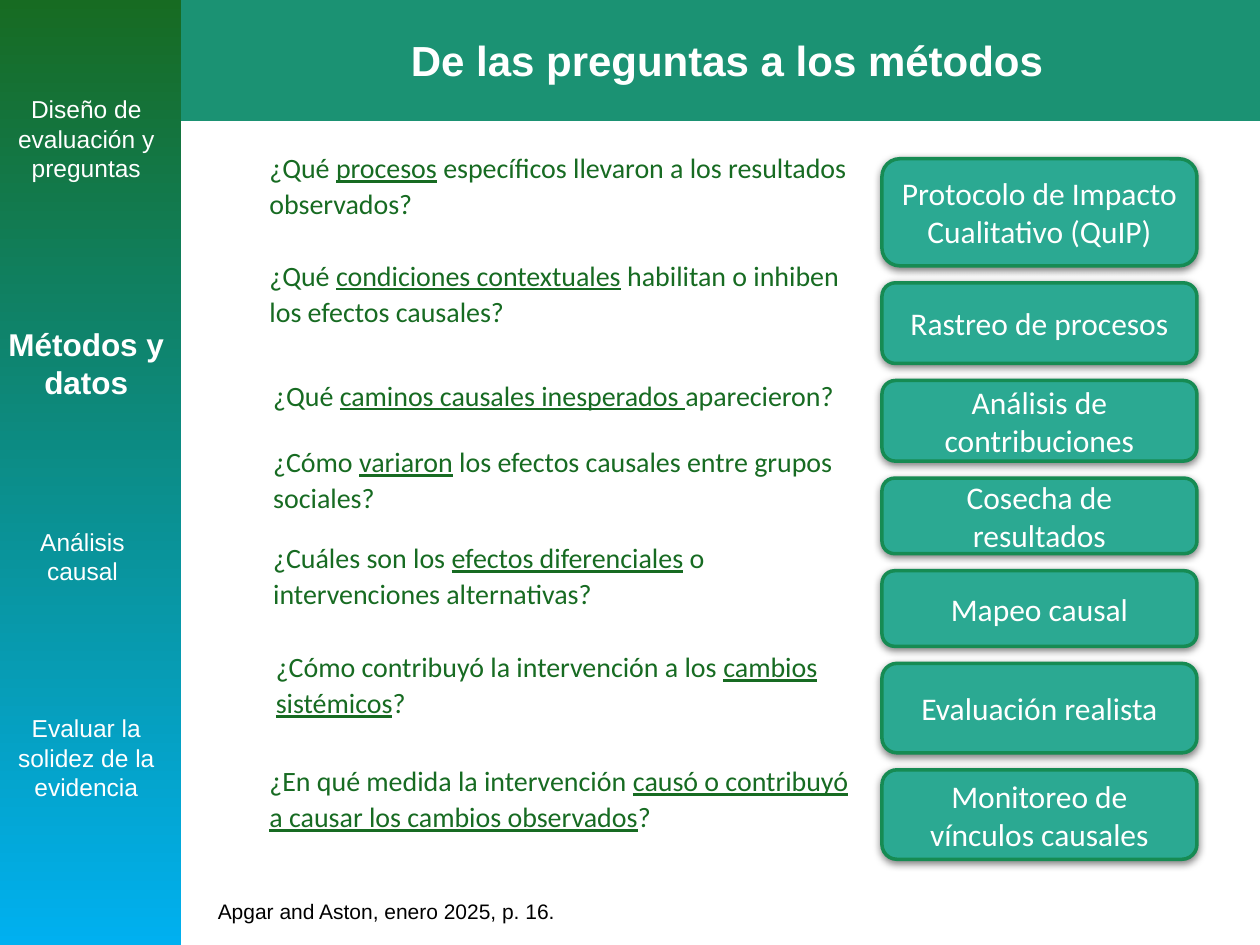
from dataclasses import dataclass

from lxml import etree
from pptx import Presentation
from pptx.dml.color import RGBColor
from pptx.enum.shapes import MSO_SHAPE
from pptx.enum.text import MSO_ANCHOR, MSO_AUTO_SIZE, PP_ALIGN
from pptx.oxml.ns import qn
from pptx.util import Inches, Pt

RECTANGLE = MSO_SHAPE.RECTANGLE
PROCESS = MSO_SHAPE.FLOWCHART_PROCESS
ROUNDED = MSO_SHAPE.ROUNDED_RECTANGLE
TOP, MIDDLE = MSO_ANCHOR.TOP, MSO_ANCHOR.MIDDLE
LEFT, CENTER = PP_ALIGN.LEFT, PP_ALIGN.CENTER

# The slide is a grid of square cells
WIDTH, HEIGHT = Inches(10), Inches(7.5)
COLUMNS, ROWS = 100, 75
TITLE_ONLY = 5


@dataclass(frozen=True)
class Theme:
    header: str = "1B9273"
    button: str = "2BA992"
    outline: str = "168B53"
    green: str = "176B22"
    blue: str = "00B0F0"
    white: str = "FFFFFF"
    black: str = "000000"
    heading_font: str = "Arial"
    body_font: str = "Calibri"
    title_size: int = 24
    large_size: int = 18
    question_size: int = 16
    step_size: int = 14
    source_size: int = 12


THEME = Theme()


@dataclass(frozen=True)
class Box:
    """Place and size in grid columns and rows."""
    left: float
    top: float
    width: float
    height: float

    def lengths(self) -> tuple[int, int, int, int]:
        return (round(WIDTH * self.left / COLUMNS), round(HEIGHT * self.top / ROWS),
                round(WIDTH * self.width / COLUMNS), round(HEIGHT * self.height / ROWS))


@dataclass(frozen=True)
class Step:
    text: str
    left: float
    top: float
    current: bool = False


@dataclass(frozen=True)
class Question:
    text: str  # underscores enclose the underlined words
    box: Box


@dataclass(frozen=True)
class Method:
    text: str
    height: float


HEADER = Box(0, -0.1, 100, 9.7)
TITLE = Box(17.2, 2.2, 81, 5)
SIDEBAR = Box(-0.7, 0, 15.1, 75)
SOURCE = Box(16.3, 70.8, 30.8, 3)
STEP_HEIGHT = 9.3
METHOD_LEFT, METHOD_TOP, METHOD_WIDTH, METHOD_GAP = 70, 12.6, 25, 1.35

STEPS = [
    Step("Diseño de evaluación y preguntas", -0.7, 6.5),
    Step("Métodos y datos", -0.7, 24.8, current=True),
    Step("Análisis\ncausal", -1, 40.8),
    Step("Evaluar la solidez de la evidencia", -0.7, 55.6),
]
QUESTIONS = [
    Question("¿Qué _procesos_ específicos llevaron a los resultados observados?",
             Box(15.4, 11.6, 54.6, 6)),
    Question("¿Qué _condiciones contextuales_ habilitan o inhiben los efectos causales?",
             Box(15.4, 18.9, 54.6, 8.5)),
    Question("¿Qué _caminos causales inesperados _aparecieron?",
             Box(15.7, 28.6, 54.6, 5.3)),
    Question("¿Cómo _variaron_ los efectos causales entre grupos sociales?",
             Box(15.7, 35.3, 54.3, 5.3)),
    Question("¿Cuáles son los _efectos diferenciales_ o intervenciones alternativas?",
             Box(15.7, 41.9, 54, 7.3)),
    Question("¿Cómo contribuyó la intervención a los _cambios sistémicos_?",
             Box(15.9, 50.6, 53.8, 7.3)),
    Question("¿En qué medida la intervención _causó o contribuyó a causar los cambios observados_?",
             Box(15.4, 59.6, 53.8, 7.3)),
]
METHODS = [
    Method("Protocolo de Impacto Cualitativo (QuIP)", 8.5),
    Method("Rastreo de procesos", 6.4),
    Method("Análisis de contribuciones", 6.4),
    Method("Cosecha de resultados", 6),
    Method("Mapeo causal", 6),
    Method("Evaluación realista", 7.1),
    Method("Monitoreo de vínculos causales", 7.1),
]


def color(value: str) -> RGBColor:
    return RGBColor.from_string(value)


def write(shape, text: str, font: str, size: int, ink: str, align=CENTER,
          anchor=TOP, bold: bool = False, margin: float = 0.05):
    """Write one paragraph, underlining what underscores enclose."""
    frame = shape.text_frame
    frame.word_wrap = True
    frame.auto_size = MSO_AUTO_SIZE.NONE
    frame.vertical_anchor = anchor
    frame.margin_left = frame.margin_right = Inches(0.1)
    frame.margin_top = frame.margin_bottom = Inches(margin)
    paragraph = frame.paragraphs[0]
    paragraph.alignment = align
    parts = text.split("_")
    paragraph.text = parts[0]
    for part in parts[1:]:
        paragraph.add_run().text = part
    for index, run in enumerate(paragraph.runs):
        run.font.name = font
        run.font.size = Pt(size)
        run.font.color.rgb = color(ink)
        run.font.bold = bold
        if len(parts) > 1:
            run.font.underline = index % 2 == 1
    return paragraph


def add_panel(slide, kind, box: Box):
    shape = slide.shapes.add_shape(kind, *box.lengths())
    shape.shadow.inherit = False
    shape.line.fill.background()
    return shape


def add_header(slide) -> None:
    header = add_panel(slide, RECTANGLE, HEADER)
    header.fill.solid()
    header.fill.fore_color.rgb = color(THEME.header)
    title = slide.shapes.title
    title.left, title.top, title.width, title.height = TITLE.lengths()
    write(title, "De las preguntas a los métodos", THEME.heading_font,
          THEME.title_size, THEME.white, bold=True)
    header._element.addnext(title._element)  # title in front of its band


def add_sidebar(slide) -> None:
    sidebar = add_panel(slide, PROCESS, SIDEBAR)
    sidebar.fill.gradient()
    sidebar.fill.gradient_angle = 270
    for stop, position, value in zip(sidebar.fill.gradient_stops, (0, 1),
                                     (THEME.green, THEME.blue)):
        stop.position = position
        stop.color.rgb = color(value)
    for step in STEPS:
        box = Box(step.left, step.top, SIDEBAR.width, STEP_HEIGHT)
        write(slide.shapes.add_textbox(*box.lengths()), step.text, THEME.heading_font,
              THEME.large_size if step.current else THEME.step_size,
              THEME.white, bold=step.current, margin=0.1)


def add_question(slide, question: Question) -> None:
    shape = slide.shapes.add_textbox(*question.box.lengths())
    paragraph = write(shape, question.text, THEME.body_font, THEME.question_size,
                      THEME.green, LEFT, MIDDLE)
    paragraph.level = 1
    paragraph.line_spacing = 1.07
    properties = paragraph._p.get_or_add_pPr()
    properties.set("marL", str(Inches(0.5)))
    properties.set("indent", "0")


def add_method(slide, method: Method, top: float) -> None:
    shape = add_panel(slide, ROUNDED, Box(METHOD_LEFT, top, METHOD_WIDTH, method.height))
    shape.fill.solid()
    shape.fill.fore_color.rgb = color(THEME.button)
    shape.line.color.rgb = color(THEME.outline)
    shape.line.width = Pt(2)
    # Soft shadow straight below
    effects = shape._element.spPr.find(qn("a:effectLst"))
    shadow = etree.SubElement(effects, qn("a:outerShdw"), blurRad=str(Pt(4.5)),
                              dist=str(Pt(1.5)), dir="5400000", rotWithShape="0")
    tint = etree.SubElement(shadow, qn("a:srgbClr"), val=THEME.black)
    etree.SubElement(tint, qn("a:alpha"), val="50000")
    write(shape, method.text, THEME.body_font, THEME.large_size, THEME.white, anchor=MIDDLE)


def main() -> None:
    presentation = Presentation()
    presentation.slide_width, presentation.slide_height = WIDTH, HEIGHT
    slide = presentation.slides.add_slide(presentation.slide_layouts[TITLE_ONLY])
    add_header(slide)
    add_sidebar(slide)
    for question in QUESTIONS:
        add_question(slide, question)
    # Methods stacked with an equal gap
    top = METHOD_TOP
    for method in METHODS:
        add_method(slide, method, top)
        top += method.height + METHOD_GAP
    write(slide.shapes.add_textbox(*SOURCE.lengths()), "Apgar and Aston, enero 2025, p. 16.",
          THEME.heading_font, THEME.source_size, THEME.black, LEFT)
    presentation.save("out.pptx")


if __name__ == "__main__":
    main()
